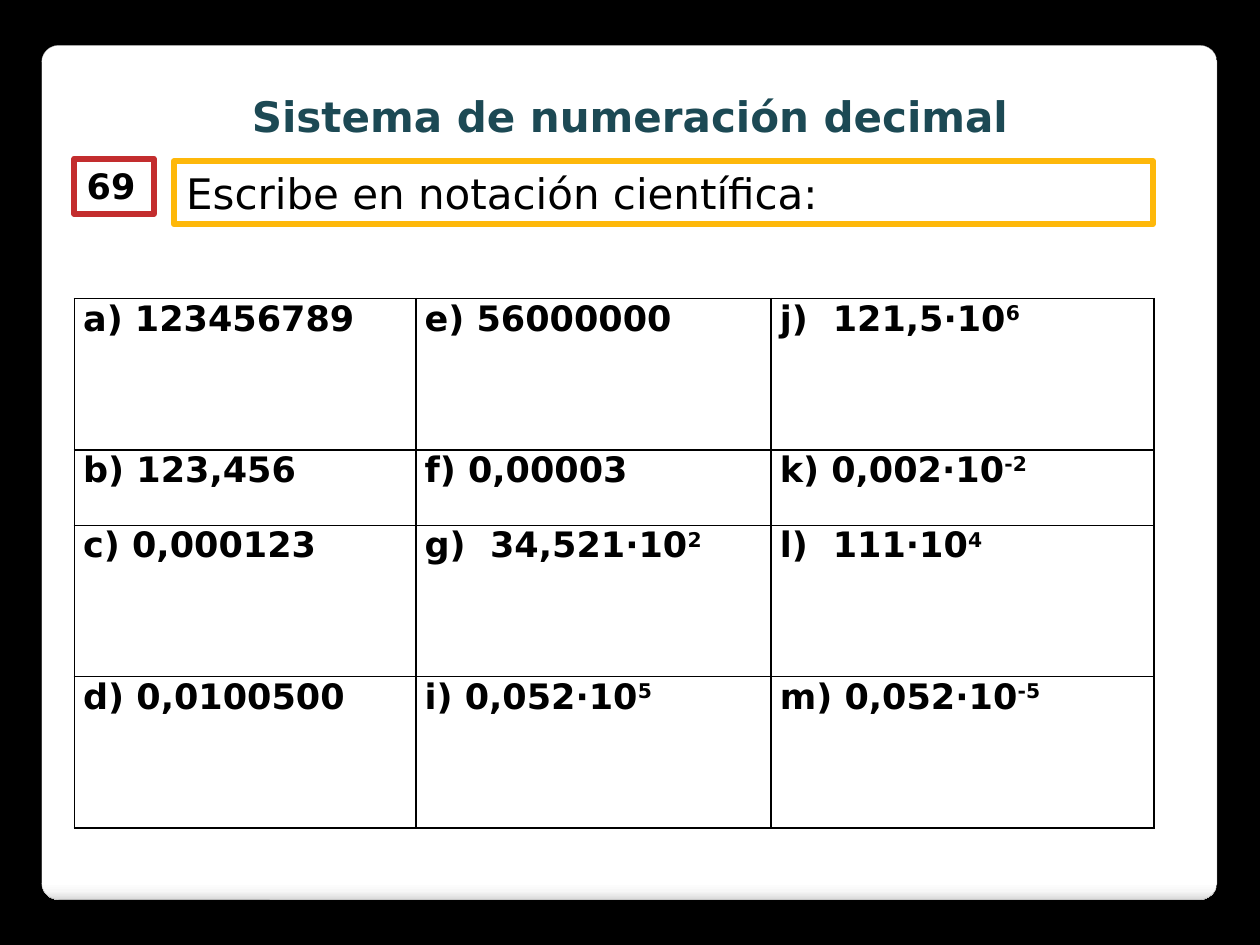
from lxml.etree import SubElement
from pptx import Presentation
from pptx.dml.color import RGBColor
from pptx.enum.shapes import MSO_SHAPE
from pptx.enum.text import MSO_ANCHOR, MSO_AUTO_SIZE, PP_ALIGN
from pptx.oxml import parse_xml
from pptx.oxml.ns import nsdecls, qn
from pptx.util import Inches, Pt

FONT = "DejaVu Sans"
TITLE = "Sistema de numeración decimal"
NUMBER = "69"
TASK = "Escribe en notación científica:"

# Each cell: text, exponent, tab stop in inches
ROWS = [
    [("a) 123456789", "", 0), ("e) 56000000", "", 0), ("j)\t121,5∙10", "6", 0.42)],
    [("b) 123,456", "", 0), ("f) 0,00003", "", 0), ("k) 0,002∙10", "-2", 0)],
    [("c) 0,000123", "", 0), ("g)\t34,521∙10", "2", 0.52), ("l)\t111∙10", "4", 0.42)],
    [("d) 0,0100500", "", 0), ("i) 0,052∙10", "5", 0), ("m) 0,052∙10", "-5", 0)],
]
WIDTHS = [2.71, 2.82, 3.04]
HEIGHTS = [1.2, 0.6, 1.2, 1.2]
STOPS = [(0, "FFFFFF"), (98, "FFFFFF"), (99, "F7F7F7"), (100, "DADADA")]


def color(code):
    return RGBColor.from_string(code)


def add_run(para, text, size, bold=True, code="000000"):
    run = para.add_run()
    run.text = text
    font = run.font
    font.name, font.size, font.bold = FONT, Pt(size), bold
    font.color.rgb = color(code)
    return run


def set_text(shape, text, size, align=PP_ALIGN.LEFT, **style):
    frame = shape.text_frame
    frame.word_wrap = True
    frame.auto_size = MSO_AUTO_SIZE.SHAPE_TO_FIT_TEXT
    frame.vertical_anchor = MSO_ANCHOR.TOP
    para = frame.paragraphs[0]
    para.alignment = align
    add_run(para, text, size, **style)


def add_box(slide, kind, place, line, width):
    box = slide.shapes.add_shape(kind, *map(Inches, place))
    box.shadow.inherit = False
    box.fill.solid()
    box.fill.fore_color.rgb = color("FFFFFF")
    box.line.color.rgb = color(line)
    box.line.width = Pt(width)
    return box


def shade(shape):
    """Fill the shape with the vertical gradient in STOPS."""
    fill = shape.fill
    fill.gradient()
    fill.gradient_angle = 270
    stops = shape.element.spPr.find(qn("a:gradFill")).find(qn("a:gsLst"))
    for stop in list(stops):
        stops.remove(stop)
    for pos, code in STOPS:
        stop = SubElement(stops, qn("a:gs"), pos=str(pos * 1000))
        SubElement(stop, qn("a:srgbClr"), val=code)


def add_borders(cell):
    props = cell._tc.get_or_add_tcPr()
    for side in "LRTB":
        props.append(parse_xml(
            f'<a:ln{side} {nsdecls("a")} w="12700"><a:solidFill>'
            f'<a:srgbClr val="000000"/></a:solidFill></a:ln{side}>'))


def fill_cell(cell, text, power, tab):
    add_borders(cell)
    cell.fill.background()
    cell.margin_left = cell.margin_right = Inches(0.07)
    cell.margin_top = cell.margin_bottom = 0
    para = cell.text_frame.paragraphs[0]
    para.alignment = PP_ALIGN.JUSTIFY
    if tab:
        tabs = SubElement(para._p.get_or_add_pPr(), qn("a:tabLst"))
        SubElement(tabs, qn("a:tab"), pos=str(Inches(tab)), algn="l")
    add_run(para, text, 20)
    if power:
        run = add_run(para, power, 20)
        run.font._element.set("baseline", "30000")


def add_grid(slide):
    place = (0.59, 2.37, sum(WIDTHS), sum(HEIGHTS))
    table = slide.shapes.add_table(
        len(ROWS), len(WIDTHS), *map(Inches, place)).table
    table.first_row = table.horz_banding = False
    for col, width in zip(table.columns, WIDTHS):
        col.width = Inches(width)
    for row, height, items in zip(table.rows, HEIGHTS, ROWS):
        row.height = Inches(height)
        for cell, item in zip(row.cells, items):
            fill_cell(cell, *item)


def main():
    deck = Presentation()
    deck.slide_width, deck.slide_height = Inches(10), Inches(7.5)
    slide = deck.slides.add_slide(deck.slide_layouts[6])
    back = slide.background.fill
    back.solid()
    back.fore_color.rgb = color("000000")

    panel = add_box(slide, MSO_SHAPE.ROUNDED_RECTANGLE,
                    (0.33, 0.36, 9.33, 6.78), "A4A4A4", 0.16)
    panel.adjustments[0] = 0.02
    shade(panel)

    badge = add_box(slide, MSO_SHAPE.RECTANGLE,
                    (0.59, 1.26, 0.63, 0.44), "C32D2E", 3.35)
    set_text(badge, NUMBER, 20)
    task = add_box(slide, MSO_SHAPE.RECTANGLE,
                   (1.38, 1.28, 7.77, 0.5), "FEB80A", 3.35)
    set_text(task, TASK, 24, bold=False)

    title = slide.shapes.add_textbox(*map(Inches, (0.39, 0.67, 9.22, 0.5)))
    set_text(title, TITLE, 24, PP_ALIGN.CENTER, code="1C4954")

    add_grid(slide)
    deck.save("out.pptx")


if __name__ == "__main__":
    main()
